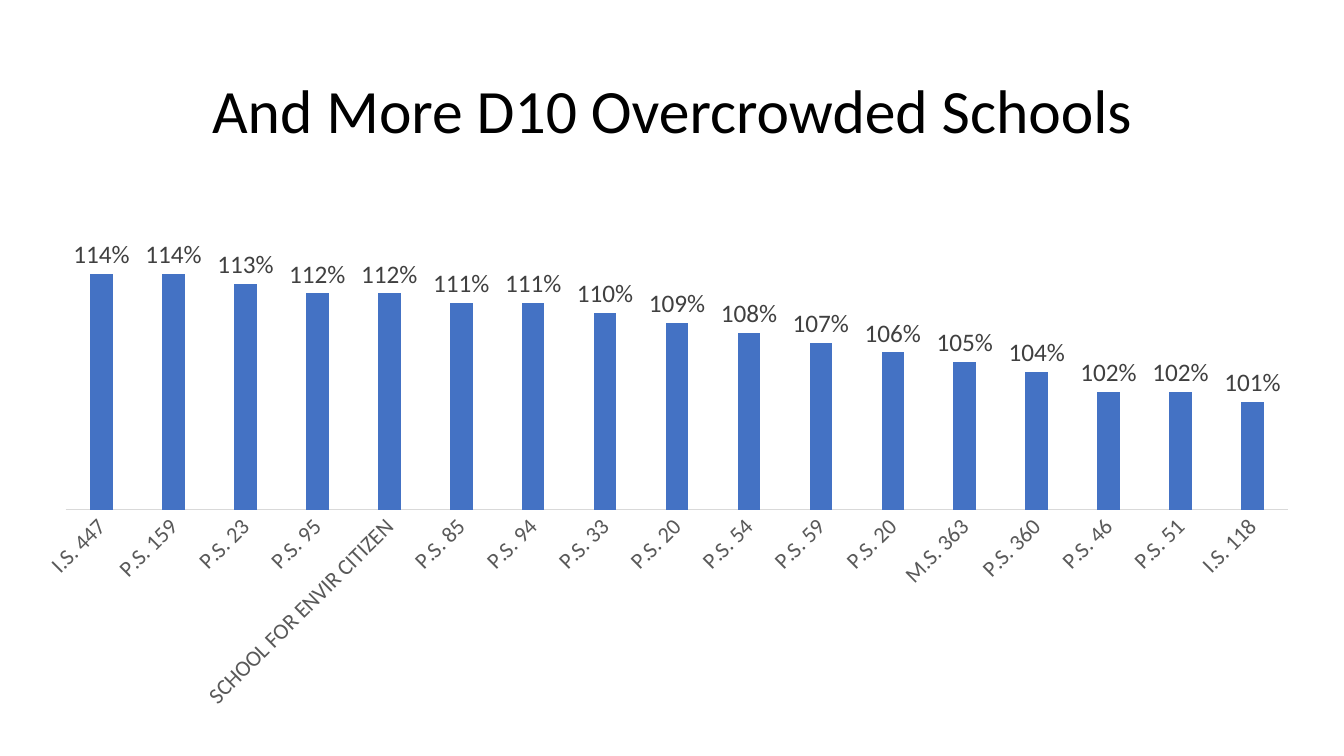
from typing import NamedTuple

from lxml import etree
from pptx import Presentation
from pptx.chart.chart import Chart
from pptx.chart.data import CategoryChartData
from pptx.dml.color import RGBColor
from pptx.enum.chart import XL_CHART_TYPE, XL_LABEL_POSITION, XL_TICK_MARK
from pptx.enum.text import MSO_ANCHOR, PP_ALIGN
from pptx.oxml.ns import qn
from pptx.slide import Slide
from pptx.text.text import Font
from pptx.util import Inches, Pt

COLUMN_CLUSTERED = XL_CHART_TYPE.COLUMN_CLUSTERED
OUTSIDE_END = XL_LABEL_POSITION.OUTSIDE_END
NO_TICKS = XL_TICK_MARK.NONE
MIDDLE = MSO_ANCHOR.MIDDLE
CENTER = PP_ALIGN.CENTER

BLACK = RGBColor(0x00, 0x00, 0x00)
BLUE = RGBColor(0x44, 0x72, 0xC4)
DARK_GRAY = RGBColor(0x40, 0x40, 0x40)
GRAY = RGBColor(0x59, 0x59, 0x59)
LIGHT_GRAY = RGBColor(0xD9, 0xD9, 0xD9)
FONT_NAME = "Calibri"
TITLE_ONLY = 5


class School(NamedTuple):
    name: str
    utilization: float


SCHOOLS = [
    School("I.S. 447", 1.14),
    School("P.S. 159", 1.14),
    School("P.S. 23", 1.13),
    School("P.S. 95", 1.12),
    School("SCHOOL FOR ENVIR CITIZEN", 1.12),
    School("P.S. 85", 1.11),
    School("P.S. 94", 1.11),
    School("P.S. 33", 1.10),
    School("P.S. 20", 1.09),
    School("P.S. 54", 1.08),
    School("P.S. 59", 1.07),
    School("P.S. 20", 1.06),
    School("M.S. 363", 1.05),
    School("P.S. 360", 1.04),
    School("P.S. 46", 1.02),
    School("P.S. 51", 1.02),
    School("I.S. 118", 1.01),
]


def set_font(font: Font, size: int, color: RGBColor) -> None:
    font.name = FONT_NAME
    font.size = Pt(size)
    font.color.rgb = color


def add_title(slide: Slide, text: str) -> None:
    title = slide.shapes.title
    title.left, title.top = Inches(0.92), Inches(0.4)
    title.width, title.height = Inches(11.5), Inches(1.45)
    title.text_frame.text = text
    title.text_frame.vertical_anchor = MIDDLE
    paragraph = title.text_frame.paragraphs[0]
    paragraph.alignment = CENTER
    paragraph.line_spacing = 0.9
    set_font(paragraph.font, 44, BLACK)


def set_plot_layout(chart: Chart, x: float, y: float, width: float, height: float) -> None:
    """Place the inner plot area, in fractions of the chart frame."""
    plot_area = chart.plots[0]._element.getparent()
    for old_layout in plot_area.findall(qn("c:layout")):
        plot_area.remove(old_layout)
    layout = etree.Element(qn("c:layout"))
    plot_area.insert(0, layout)
    manual = etree.SubElement(layout, qn("c:manualLayout"))
    settings = {
        "layoutTarget": "inner", "xMode": "edge", "yMode": "edge",
        "x": x, "y": y, "w": width, "h": height,
    }
    for tag, value in settings.items():
        etree.SubElement(manual, qn(f"c:{tag}")).set("val", str(value))


def add_schools_chart(slide: Slide, schools: list[School]) -> None:
    chart_data = CategoryChartData(number_format="0%")
    chart_data.categories = [school.name for school in schools]
    chart_data.add_series("Series 1", [school.utilization for school in schools])
    chart = slide.shapes.add_chart(
        COLUMN_CLUSTERED, Inches(0.4), Inches(1.82), Inches(12.53), Inches(5.45), chart_data
    ).chart
    chart.has_title = False
    chart.has_legend = False
    set_font(chart.font, 10, BLACK)
    set_plot_layout(chart, 0.02, 0.057, 0.968, 0.537)

    # Columns and their labels
    plot = chart.plots[0]
    plot.gap_width = 219
    plot.overlap = -27
    plot.vary_by_categories = False
    series = plot.series[0]
    series.format.fill.solid()
    series.format.fill.fore_color.rgb = BLUE
    labels = series.data_labels
    labels.show_value = True
    labels.position = OUTSIDE_END
    labels.number_format = "0%"
    labels.number_format_is_linked = False
    set_font(labels.font, 18, DARK_GRAY)

    # School names, slanted upwards
    category_axis = chart.category_axis
    category_axis.major_tick_mark = NO_TICKS
    category_axis.minor_tick_mark = NO_TICKS
    category_axis.format.line.color.rgb = LIGHT_GRAY
    category_axis.format.line.width = Pt(0.75)
    set_font(category_axis.tick_labels.font, 16, GRAY)
    body = category_axis._element.find(qn("c:txPr")).find(qn("a:bodyPr"))
    body.set("rot", str(-45 * 60000))
    body.set("vert", "horz")

    # Hidden percentage scale
    value_axis = chart.value_axis
    value_axis.minimum_scale = 0.9
    value_axis.maximum_scale = 1.2
    value_axis.has_major_gridlines = False
    value_axis.tick_labels.number_format = "0%"
    value_axis.tick_labels.number_format_is_linked = False
    value_axis.visible = False


def main() -> None:
    presentation = Presentation()
    presentation.slide_width = Inches(13.33)
    presentation.slide_height = Inches(7.5)
    slide = presentation.slides.add_slide(presentation.slide_layouts[TITLE_ONLY])
    add_title(slide, "And More D10 Overcrowded Schools")
    add_schools_chart(slide, SCHOOLS)
    presentation.save("out.pptx")


if __name__ == "__main__":
    main()
